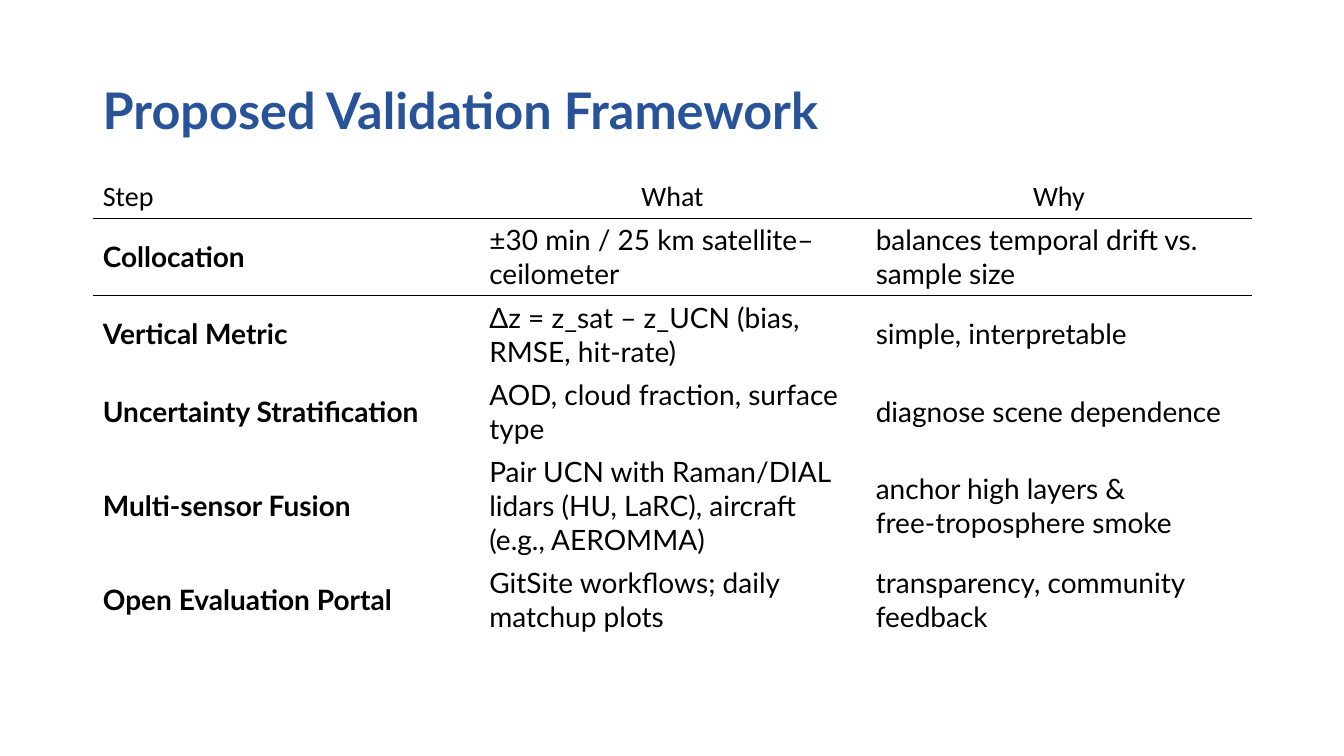
from lxml import etree
from pptx import Presentation
from pptx.dml.color import RGBColor
from pptx.enum.text import MSO_ANCHOR, PP_ALIGN
from pptx.oxml.ns import qn
from pptx.util import Inches, Pt

MIDDLE = MSO_ANCHOR.MIDDLE
LEFT, CENTER = PP_ALIGN.LEFT, PP_ALIGN.CENTER
COLORS = {"title": "285398", "text": "000000", "rule": "000000"}
PLAIN_STYLE = "{2D5ABB26-0587-4C30-8999-92F81FD0307C}"
WIDTH, HEIGHT = 13.33, 7.5
MARGIN = 0.92
SPAN = 11.5
LINE, PAD = 1 / 3, 0.1  # height of a text line, cell padding

HEADS = ["Step", "What", "Why"]
# Lines of text in the tallest cell, then the three cells
STEPS = [
    (2, "Collocation", "±30 min / 25 km satellite–ceilometer",
     "balances temporal drift vs. sample size"),
    (2, "Vertical Metric", "Δz = z_sat – z_UCN (bias, RMSE, hit‑rate)",
     "simple, interpretable"),
    (2, "Uncertainty Stratification", "AOD, cloud fraction, surface type",
     "diagnose scene dependence"),
    (3, "Multi‑sensor Fusion",
     "Pair UCN with Raman/DIAL lidars (HU, LaRC), aircraft (e.g., AEROMMA)",
     "anchor high layers & free‑troposphere smoke"),
    (2, "Open Evaluation Portal", "GitSite workflows; daily matchup plots",
     "transparency, community feedback"),
]


def style(para, face, size, color, bold=False, align=LEFT):
    para.alignment = align
    font = para.font
    font.name, font.size, font.bold = face, Pt(size), bold
    font.color.rgb = RGBColor.from_string(COLORS[color])


def add_rule(cell, side):
    """Draw a thin line along one side of a cell."""
    line = etree.Element(qn("a:" + side), w=str(Pt(1)))
    fill = etree.SubElement(line, qn("a:solidFill"))
    etree.SubElement(fill, qn("a:srgbClr"), val=COLORS["rule"])
    cell._tc.get_or_add_tcPr().insert(0, line)


def add_title(slide, text, left, top, width, height):
    box = slide.shapes.add_textbox(*map(Inches, (left, top, width, height)))
    frame = box.text_frame
    frame.word_wrap = True
    frame.vertical_anchor = MIDDLE
    para = frame.paragraphs[0]
    para.text = text
    para.line_spacing = 0.9
    style(para, "Lato", 36, "title", bold=True)


def fill_cell(cell, text, face, bold=False, align=LEFT):
    cell.text = text
    cell.vertical_anchor = MIDDLE
    cell.fill.background()
    style(cell.text_frame.paragraphs[0], face, 20, "text", bold, align)


def add_steps(slide, left, top, width):
    heights = [PAD + LINE] + [PAD + step[0] * LINE for step in STEPS]
    box = map(Inches, (left, top, width, sum(heights)))
    table = slide.shapes.add_table(len(heights), len(HEADS), *box).table
    table._tbl.tblPr.find(qn("a:tableStyleId")).text = PLAIN_STYLE
    table.horz_banding = False
    for row, height in zip(table.rows, heights):
        row.height = Inches(height)

    # Header row with the rule below it
    for col, head in enumerate(HEADS):
        cell = table.cell(0, col)
        fill_cell(cell, head, "Calibri", align=CENTER if col else LEFT)
        add_rule(cell, "lnB")
        add_rule(table.cell(1, col), "lnT")

    # One row per step, its name in bold
    for row, (_, *texts) in enumerate(STEPS, 1):
        for col, text in enumerate(texts):
            fill_cell(table.cell(row, col), text, "Lato", bold=col == 0)


def main():
    deck = Presentation()
    deck.slide_width, deck.slide_height = Inches(WIDTH), Inches(HEIGHT)
    slide = deck.slides.add_slide(deck.slide_layouts[6])
    add_title(slide, "Proposed Validation Framework", MARGIN, 0.4, SPAN, 1.45)
    add_steps(slide, MARGIN, 1.73, SPAN)
    deck.save("out.pptx")


if __name__ == "__main__":
    main()
